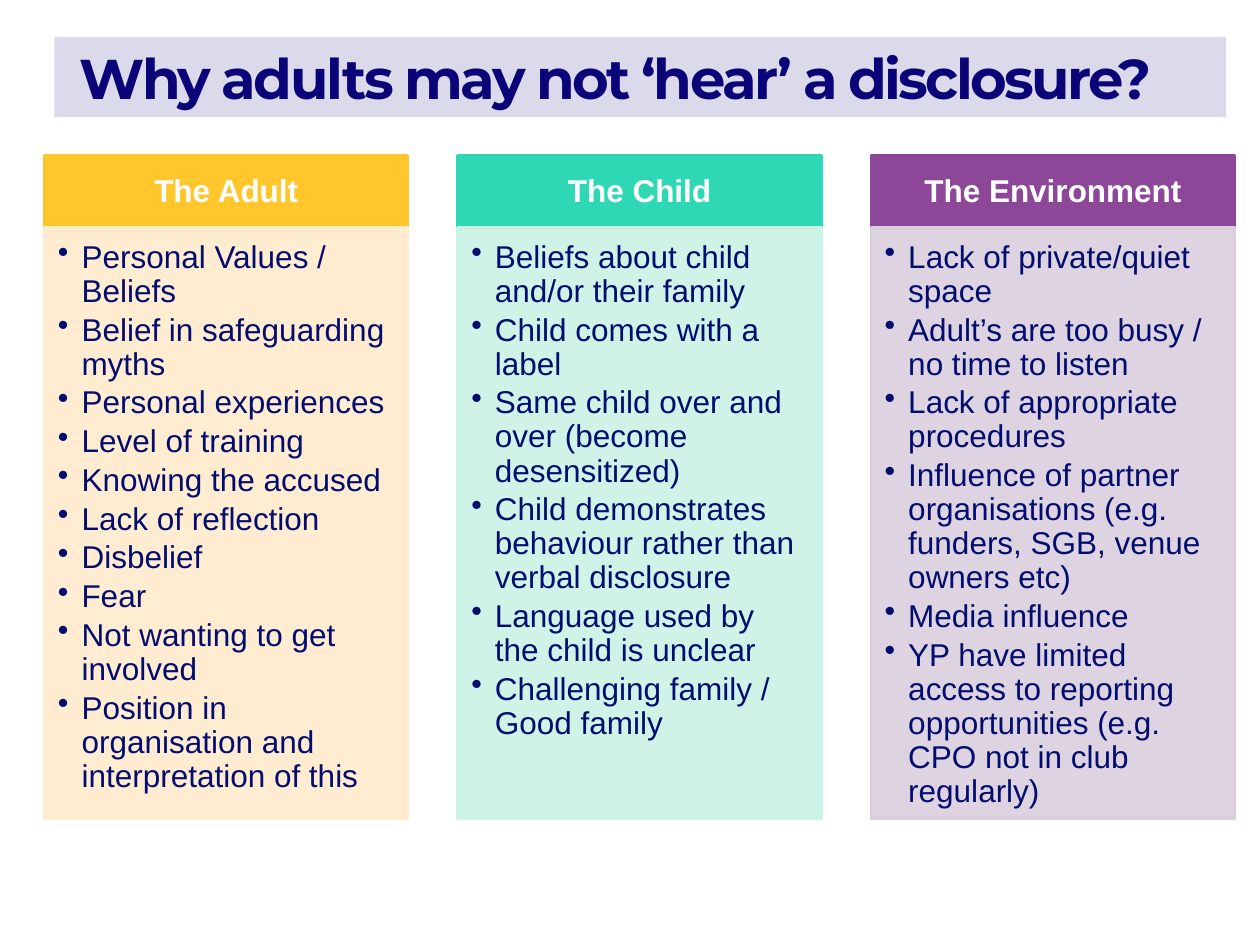
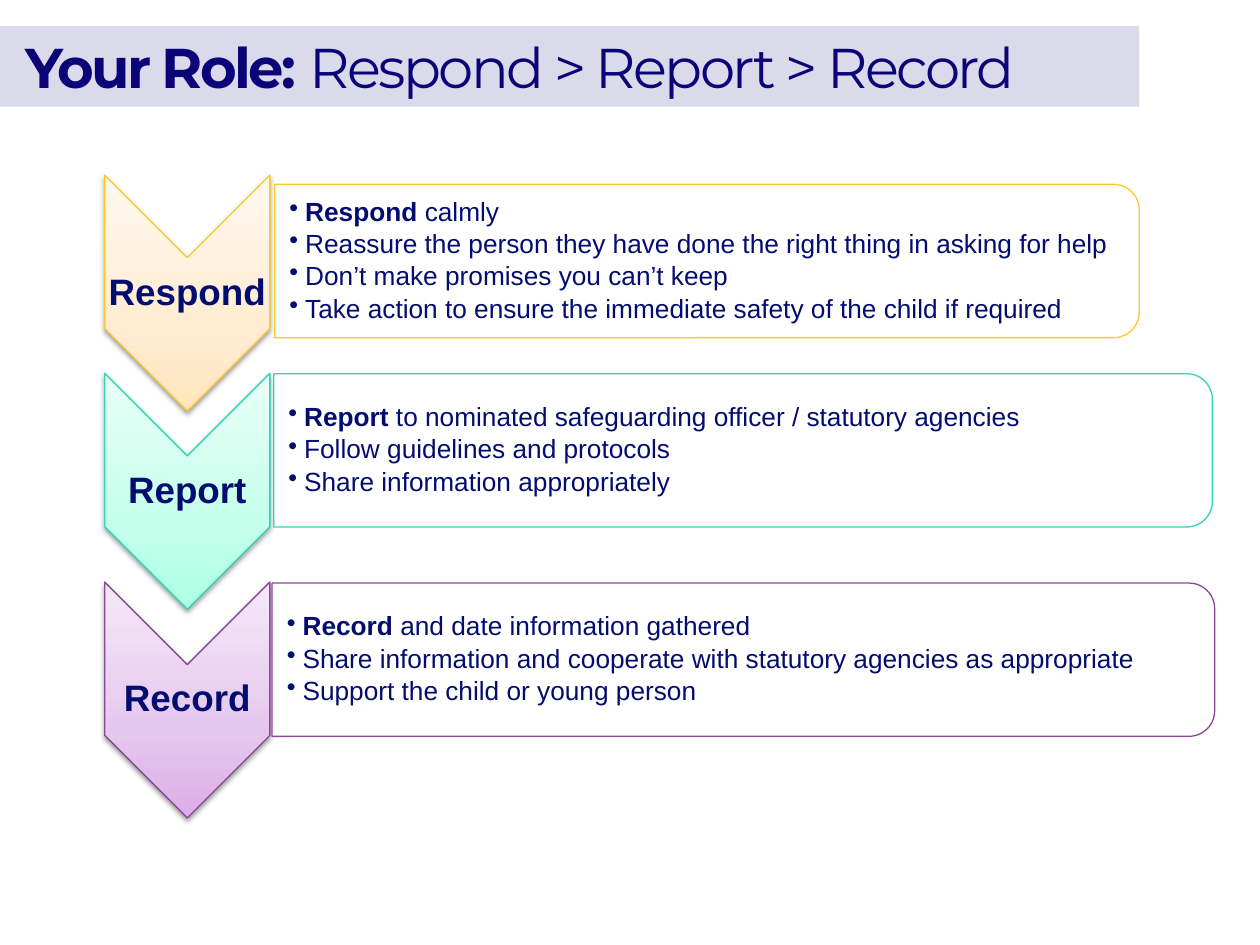
import pptx
import pptx.dml.color
import pptx.enum.shapes
import pptx.enum.text
import pptx.oxml
import pptx.oxml.ns
import pptx.util
from dataclasses import dataclass

Pt = pptx.util.Pt
Preset = pptx.enum.shapes.MSO_SHAPE
Align = pptx.enum.text.PP_ALIGN
Anchor = pptx.enum.text.MSO_ANCHOR
qn = pptx.oxml.ns.qn


@dataclass(frozen=True)
class Theme:
    title_font: str = "Montserrat"
    body_font: str = "Arial"
    title_ink: str = "0A0478"
    ink: str = "030D6F"
    white: str = "FFFFFF"
    band: str = "DADAEB"
    yellow: str = "FFC72C"
    green: str = "2ED8B4"
    purple: str = "8C4799"
    title_size: int = 32
    column_size: int = 18
    label_size: int = 21
    step_size: int = 15


THEME = Theme()

COLUMNS_TITLE = [("Why adults may not ‘hear’ a disclosure?", True)]
COLUMNS = [
    ("The Adult", THEME.yellow, "FFEBCD", [
        "Personal Values / Beliefs",
        "Belief in safeguarding myths",
        "Personal experiences",
        "Level of training",
        "Knowing the accused",
        "Lack of reflection",
        "Disbelief",
        "Fear",
        "Not wanting to get involved",
        "Position in organisation and interpretation of this",
    ]),
    ("The Child", THEME.green, "CBF2E6", [
        "Beliefs about child and/or their family",
        "Child comes with a label",
        "Same child over and over (become desensitized)",
        "Child demonstrates behaviour rather than verbal disclosure",
        "Language used by the child is unclear",
        "Challenging family / Good family",
    ]),
    ("The Environment", THEME.purple, "DBCFDE", [
        "Lack of private/quiet space",
        "Adult’s are too busy / no time to listen",
        "Lack of appropriate procedures",
        "Influence of partner organisations (e.g. funders, SGB, venue owners etc)",
        "Media influence",
        "YP have limited access to reporting opportunities (e.g. CPO not in club regularly)",
    ]),
]

ROLE_TITLE = [("Your Role: ", True), ("Respond > Report > Record", False)]
STEPS = [
    dict(label="Respond", color=THEME.yellow, shades=("FFE5BE", "FFECD2", "FFF8EE"),
         top=100.1, panel=(157, 105.4, 494), points=[
             [("Respond", True), (" calmly", False)],
             "Reassure the person they have done the right thing in asking for help",
             "Don’t make promises you can’t keep",
             "Take action to ensure the immediate safety of the child if required",
         ]),
    dict(label="Report", color=THEME.green, shades=("ACFFE4", "C4FFEB", "E9FFF7"),
         top=213.3, panel=(156.4, 213.6, 536.4), points=[
             [("Report", True), (" to nominated safeguarding officer / statutory agencies", False)],
             "Follow guidelines and protocols",
             "Share information appropriately",
         ]),
    dict(label="Record", color=THEME.purple, shades=("DBAEE7", "E5C6ED", "F5E9F9"),
         top=332.6, panel=(155.5, 333.2, 538.6), points=[
             [("Record", True), (" and date information gathered", False)],
             "Share information and cooperate with statutory agencies as appropriate",
             "Support the child or young person",
         ]),
]


def rgb(code):
    return pptx.dml.color.RGBColor.from_string(code)


def element(xml):
    return pptx.oxml.parse_xml(xml.replace(" ", f" {pptx.oxml.ns.nsdecls('a')} ", 1))


def write(box, paragraphs, size, color=THEME.ink, font=THEME.body_font, bold=False,
          align=Align.LEFT, anchor=Anchor.MIDDLE, insets=(0.7, 0.7, 0.7, 0.7),
          line_spacing=0.9, indent=0, tracking=0):
    frame = box.text_frame
    frame.word_wrap = True
    frame.auto_size = pptx.enum.text.MSO_AUTO_SIZE.NONE
    frame.vertical_anchor = anchor
    (frame.margin_left, frame.margin_top,
     frame.margin_right, frame.margin_bottom) = map(Pt, insets)
    for index, content in enumerate(paragraphs):
        para = frame.add_paragraph() if index else frame.paragraphs[0]
        para.alignment = align
        if indent:
            properties = para._p.get_or_add_pPr()
            properties.set("marL", str(Pt(indent)))
            properties.set("indent", str(-Pt(indent)))
            properties.append(element('<a:buChar char="•"/>'))
            para.space_after = Pt(size * 0.15)
        para.line_spacing = line_spacing
        spans = [(content, bold)] if isinstance(content, str) else content
        for text, heavy in spans:
            span = para.add_run()
            span.text = text
            span.font.name = font
            span.font.size = Pt(size)
            span.font.bold = heavy
            span.font.color.rgb = rgb(color)
            if tracking:
                span._r.get_or_add_rPr().set("spc", str(int(tracking * 100)))


def add_shape(page, preset, left, top, width, height, fill, line, weight,
              opacity=100, turned=False):
    if turned:
        left, top = left + (width - height) / 2, top + (height - width) / 2
        width, height = height, width
    shape = page.shapes.add_shape(preset, *map(Pt, (left, top, width, height)))
    shape.rotation = 90 if turned else 0
    shape.shadow.inherit = False
    shape.fill.solid()
    shape.fill.fore_color.rgb = rgb(fill)
    shape.line.color.rgb = rgb(line)
    shape.line.width = Pt(weight)
    if opacity < 100:
        fill_color = shape._element.spPr.find(qn("a:solidFill"))[0]
        fill_color.append(element(f'<a:alpha val="{opacity * 1000}"/>'))
    return shape


def add_text_box(page, left, top, width, height, paragraphs, **style):
    box = page.shapes.add_textbox(*map(Pt, (left, top, width, height)))
    write(box, paragraphs, **style)


def shade(shape, colors):
    stops = "".join(f'<a:gs pos="{place}000"><a:srgbClr val="{color}"/></a:gs>'
                    for place, color in zip((0, 35, 100), colors))
    gradient = element(f'<a:gradFill rotWithShape="0"><a:gsLst>{stops}</a:gsLst>'
                       '<a:lin ang="16200000" scaled="1"/></a:gradFill>')
    properties = shape._element.spPr
    properties.replace(properties.find(qn("a:solidFill")), gradient)
    properties.find(qn("a:effectLst")).append(element(
        f'<a:outerShdw blurRad="{Pt(3.1)}" dist="{Pt(1.6)}" dir="5400000" rotWithShape="0">'
        '<a:srgbClr val="000000"><a:alpha val="38000"/></a:srgbClr></a:outerShdw>'))


def add_page(deck, title, left, top, width):
    page = deck.slides.add_slide(deck.slide_layouts[5])
    band = page.shapes.title
    band.left, band.top, band.width, band.height = map(Pt, (left, top, width, 46))
    band.fill.solid()
    band.fill.fore_color.rgb = rgb(THEME.band)
    write(band, [title], size=THEME.title_size, color=THEME.title_ink,
          font=THEME.title_font, insets=(14.4, 3.6, 14.4, 3.6), line_spacing=1.0,
          tracking=-1.5)
    return page


def build_columns(deck):
    page = add_page(deck, COLUMNS_TITLE, 31, 21, 669.6)
    left, top, width, pitch = 25.6, 89.3, 207.4, 236.2
    header_height, list_height = 41, 337
    for index, (heading, color, tint, points) in enumerate(COLUMNS):
        x = left + index * pitch
        header = add_shape(page, Preset.RECTANGLE, x, top, width, header_height,
                           color, color, 2)
        write(header, [heading], size=THEME.column_size, color=THEME.white, bold=True,
              align=Align.CENTER, insets=(10, 5.8, 10, 5.8))
        card = add_shape(page, Preset.RECTANGLE, x, top + header_height, width,
                         list_height, tint, tint, 2, opacity=90)
        write(card, points, size=THEME.column_size, anchor=Anchor.TOP,
              insets=(7.5, 7.5, 10, 11.5), indent=13.5)


def build_steps(deck):
    page = add_page(deck, ROLE_TITLE, 0, 15, 651)
    left, width, height = 59.8, 94.4, 134.8
    panel_height, inset = 87.6, 4.3
    for step in STEPS:
        arrow = add_shape(page, Preset.CHEVRON, left, step["top"], width, height,
                          step["shades"][0], step["color"], 0.75, turned=True)
        shade(arrow, step["shades"])
        add_text_box(page, left, step["top"] + width / 2, width, height - width,
                     [step["label"]], size=THEME.label_size, bold=True,
                     align=Align.CENTER)
        x, y, panel_width = step["panel"]
        add_shape(page, Preset.ROUND_2_SAME_RECTANGLE, x, y, panel_width, panel_height,
                  THEME.white, step["color"], 0.75, opacity=90, turned=True)
        add_text_box(page, x, y + inset, panel_width - inset, panel_height - 2 * inset,
                     step["points"], size=THEME.step_size, insets=(8.4, 0.7, 0.7, 0.7),
                     indent=9)


def main():
    deck = pptx.Presentation()
    deck.slide_width, deck.slide_height = Pt(720), Pt(540)
    build_columns(deck)
    build_steps(deck)
    deck.save("out.pptx")


if __name__ == "__main__":
    main()
